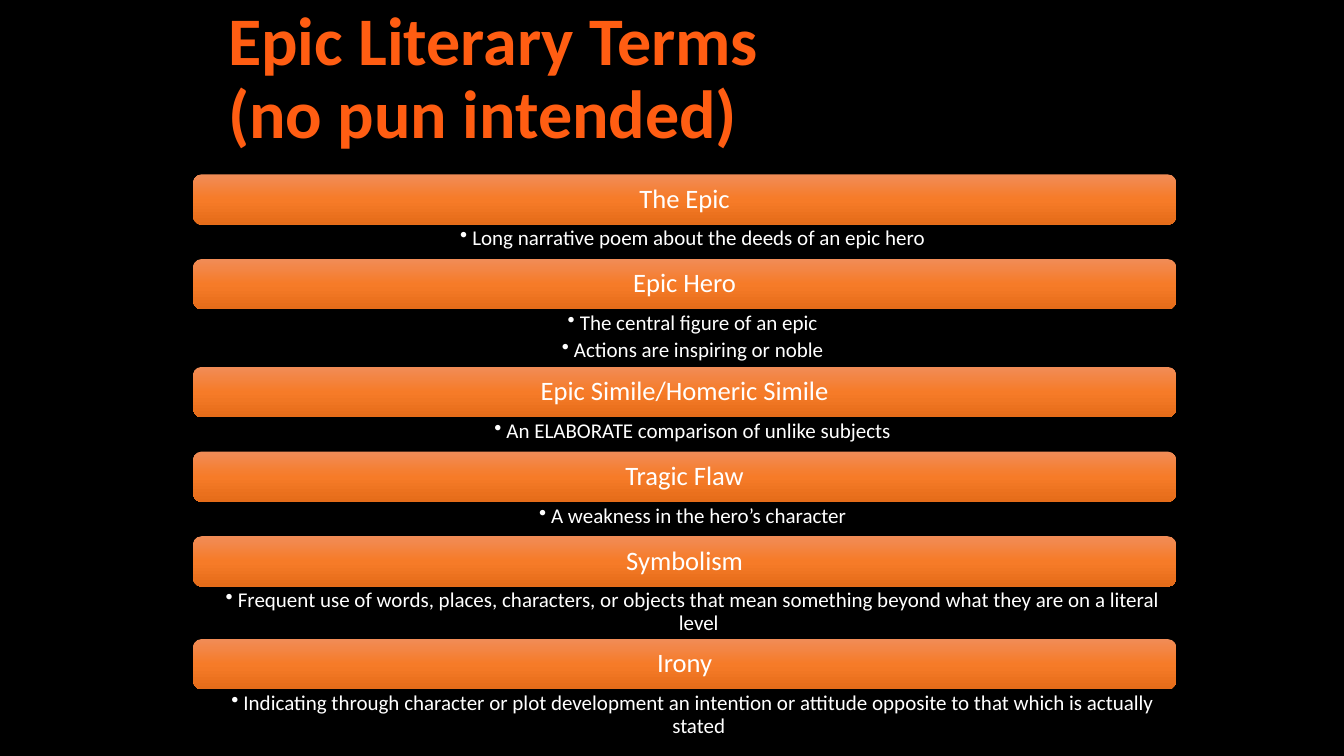
from copy import deepcopy
from dataclasses import dataclass

from lxml.etree import SubElement
from pptx import Presentation
from pptx.dml.color import RGBColor
from pptx.enum.shapes import MSO_SHAPE
from pptx.enum.text import MSO_ANCHOR, PP_ALIGN
from pptx.oxml.ns import qn
from pptx.shapes.autoshape import Shape
from pptx.slide import Slide
from pptx.text.text import TextFrame, _Paragraph as Paragraph
from pptx.util import Inches, Length, Pt

BLACK = RGBColor(0x00, 0x00, 0x00)
WHITE = RGBColor(0xFF, 0xFF, 0xFF)
TITLE_ORANGE = RGBColor(0xFF, 0x5D, 0x12)
BAR_STOPS = (
    (0.0, RGBColor(0xF1, 0x8C, 0x57)),
    (0.5, RGBColor(0xF6, 0x7B, 0x28)),
    (1.0, RGBColor(0xE5, 0x6C, 0x19)),
)

FONT = "Calibri"
SLIDE_WIDTH, SLIDE_HEIGHT = Inches(13.33), Inches(7.5)
COLUMN, ROW = SLIDE_WIDTH / 160, SLIDE_HEIGHT / 150

LIST_LEFT, LIST_WIDTH = 23, 117  # columns
LIST_TOP, BAR_ROWS = 34.6, 10  # rows
ONE_LINE, WRAPPED, TWO_BULLETS = 6.8, 10.4, 11.4  # rows
BULLET_INDENT = Inches(0.12)


@dataclass(frozen=True)
class Term:
    name: str
    meanings: tuple[str, ...]
    meaning_rows: float


TERMS = (
    Term("The Epic", ("Long narrative poem about the deeds of an epic hero",), ONE_LINE),
    Term("Epic Hero", ("The central figure of an epic", "Actions are inspiring or noble"), TWO_BULLETS),
    Term("Epic Simile/Homeric Simile", ("An ELABORATE comparison of unlike subjects",), ONE_LINE),
    Term("Tragic Flaw", ("A weakness in the hero’s character",), ONE_LINE),
    Term(
        "Symbolism",
        ("Frequent use of words, places, characters, or objects that mean "
         "something beyond what they are on a literal level",),
        WRAPPED,
    ),
    Term(
        "Irony",
        ("Indicating through character or plot development an intention or "
         "attitude opposite to that which is actually stated",),
        WRAPPED,
    ),
)


def grid_box(left: float, top: float, width: float, height: float) -> tuple[Length, ...]:
    """Turn columns and rows into slide lengths."""
    return tuple(
        Length(round(count * unit))
        for count, unit in ((left, COLUMN), (top, ROW), (width, COLUMN), (height, ROW))
    )


def set_margins(frame: TextFrame, left: float, top: float, right: float, bottom: float) -> None:
    frame.word_wrap = True
    frame.margin_left, frame.margin_top = Inches(left), Inches(top)
    frame.margin_right, frame.margin_bottom = Inches(right), Inches(bottom)


def style_paragraph(paragraph: Paragraph, size: float, color: RGBColor, align: PP_ALIGN) -> None:
    paragraph.alignment = align
    paragraph.line_spacing = 0.9
    font = paragraph.font
    font.name, font.size, font.color.rgb = FONT, Pt(size), color


def add_bullet(paragraph: Paragraph) -> None:
    properties = paragraph._p.get_or_add_pPr()
    properties.set("marL", str(BULLET_INDENT))
    properties.set("indent", str(-BULLET_INDENT))
    # The bullet must come before the default run properties.
    bullet = SubElement(properties, qn("a:buChar"), char="•")
    properties.find(qn("a:defRPr")).addprevious(bullet)


def fill_bar(bar: Shape) -> None:
    bar.fill.gradient()
    bar.fill.gradient_angle = 270
    stop_list = bar._element.spPr.find(f".//{qn('a:gsLst')}")
    stop_list.append(deepcopy(stop_list[0]))
    for stop, (position, color) in zip(bar.fill.gradient_stops, BAR_STOPS):
        stop.position, stop.color.rgb = position, color


def add_title(slide: Slide, text: str) -> None:
    frame = slide.shapes.add_textbox(*grid_box(26, 3.4, 108, 25)).text_frame
    set_margins(frame, 0.1, 0.05, 0.1, 0.05)
    frame.vertical_anchor = MSO_ANCHOR.MIDDLE
    paragraph = frame.paragraphs[0]
    paragraph.text = text
    style_paragraph(paragraph, 48.6, TITLE_ORANGE, PP_ALIGN.LEFT)
    paragraph.font.bold = True


def add_term_bar(slide: Slide, name: str, top: float) -> None:
    bar = slide.shapes.add_shape(
        MSO_SHAPE.ROUNDED_RECTANGLE, *grid_box(LIST_LEFT, top, LIST_WIDTH, BAR_ROWS)
    )
    bar.shadow.inherit = False
    bar.line.fill.background()
    fill_bar(bar)
    frame = bar.text_frame
    set_margins(frame, 0.1, 0.1, 0.1, 0.1)
    frame.vertical_anchor = MSO_ANCHOR.MIDDLE
    frame.text = name
    style_paragraph(frame.paragraphs[0], 19, WHITE, PP_ALIGN.CENTER)


def add_meanings(slide: Slide, term: Term, top: float) -> None:
    box = slide.shapes.add_textbox(*grid_box(LIST_LEFT, top, LIST_WIDTH, term.meaning_rows))
    frame = box.text_frame
    set_margins(frame, 0.31, 0.03, 0.15, 0.03)
    frame.text = "\n".join(term.meanings)
    for paragraph in frame.paragraphs:
        paragraph.level = 1
        paragraph.space_after = Pt(3)
        style_paragraph(paragraph, 15, WHITE, PP_ALIGN.CENTER)
        add_bullet(paragraph)


def main() -> None:
    presentation = Presentation()
    presentation.slide_width, presentation.slide_height = SLIDE_WIDTH, SLIDE_HEIGHT
    slide = presentation.slides.add_slide(presentation.slide_layouts[6])
    slide.background.fill.solid()
    slide.background.fill.fore_color.rgb = BLACK

    add_title(slide, "Epic Literary Terms \v(no pun intended)")
    top = LIST_TOP
    for term in TERMS:
        add_term_bar(slide, term.name, top)
        add_meanings(slide, term, top + BAR_ROWS)
        top += BAR_ROWS + term.meaning_rows

    presentation.save("out.pptx")


if __name__ == "__main__":
    main()
